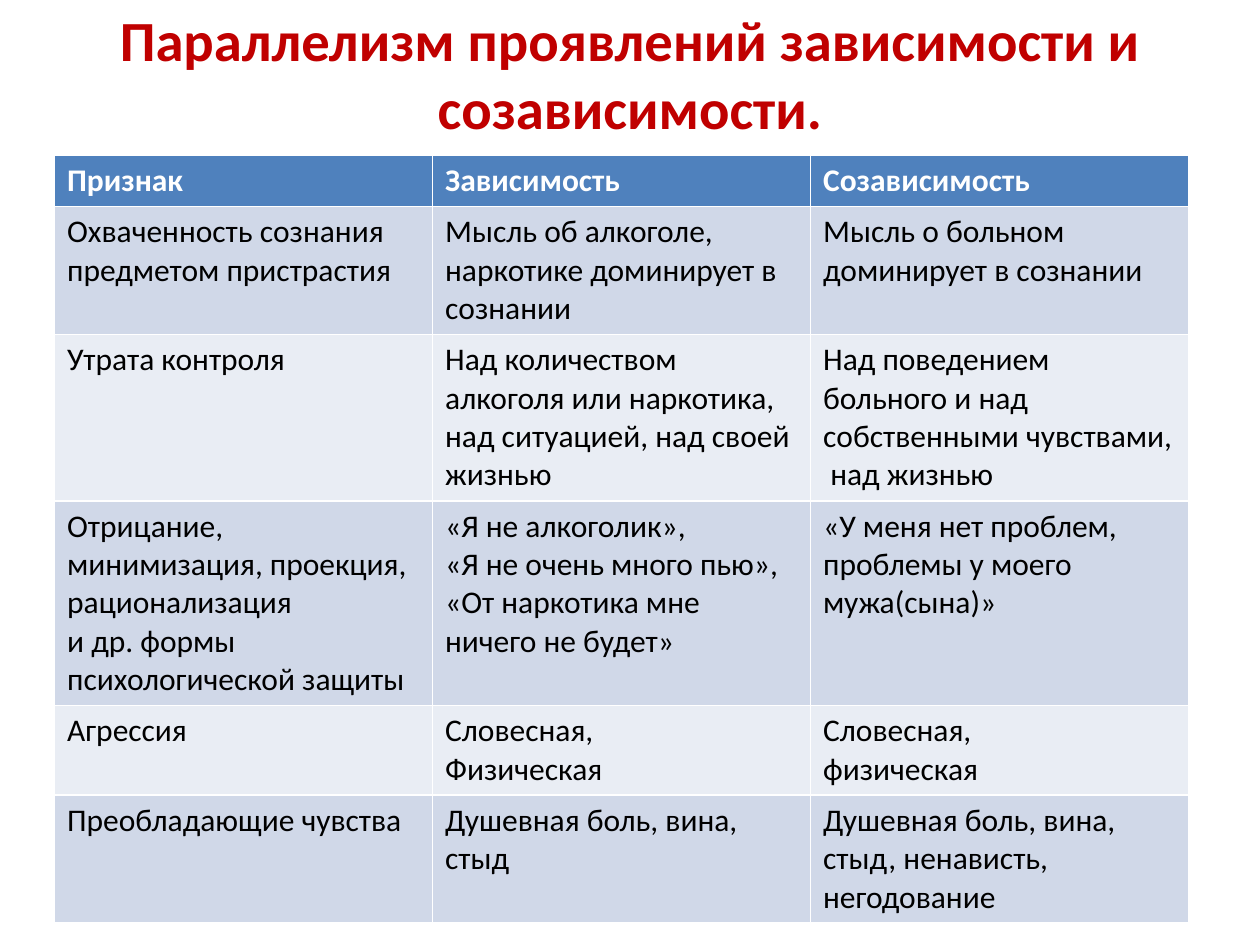
from pptx import Presentation
from pptx.dml.color import RGBColor
from pptx.enum.text import MSO_ANCHOR, MSO_AUTO_SIZE, PP_ALIGN
from pptx.util import Cm, Pt

MIDDLE = MSO_ANCHOR.MIDDLE
NO_AUTOFIT = MSO_AUTO_SIZE.NONE
CENTER = PP_ALIGN.CENTER

FONT = "Calibri"
COLORS = {
    "title": "C00000",
    "header": "4F81BD",
    "header_text": "FFFFFF",
    "odd_row": "D0D8E8",
    "even_row": "E9EDF4",
    "text": "000000",
}

ROWS = [
    ("Признак", "Зависимость", "Созависимость"),
    ("Охваченность сознания предметом пристрастия",
     "Мысль об алкоголе, наркотике доминирует в сознании",
     "Мысль о больном доминирует в сознании"),
    ("Утрата контроля",
     "Над количеством алкоголя или наркотика, над ситуацией, над своей жизнью",
     "Над поведением больного и над собственными чувствами,\n над жизнью"),
    ("Отрицание, минимизация, проекция, рационализация\n"
     "и др. формы психологической защиты",
     "«Я не алкоголик»,\n«Я не очень много пью», «От наркотика мне ничего не будет»",
     "«У меня нет проблем, проблемы у моего мужа(сына)»"),
    ("Агрессия", "Словесная,\nФизическая", "Словесная,\nфизическая"),
    ("Преобладающие чувства",
     "Душевная боль, вина, стыд",
     "Душевная боль, вина, стыд, ненависть, негодование"),
]
LINES_PER_ROW = [1, 3, 4, 5, 2, 3]
LINE_HEIGHT = 0.77
CELL_PADDING = 0.25


def style_text(text_frame, size, color, bold):
    for paragraph in text_frame.paragraphs:
        for run in paragraph.runs:
            run.font.name = FONT
            run.font.size = Pt(size)
            run.font.bold = bold
            run.font.color.rgb = RGBColor.from_string(COLORS[color])


prs = Presentation()
prs.slide_width, prs.slide_height = Cm(25.4), Cm(19.05)
slide = prs.slides.add_slide(prs.slide_layouts[5])

title = slide.shapes.title
title.left, title.top, title.width, title.height = Cm(1.27), Cm(0), Cm(22.86), Cm(2.92)
heading = title.text_frame
heading.text = "Параллелизм проявлений зависимости и созависимости."
heading.word_wrap = True
heading.auto_size = NO_AUTOFIT
heading.vertical_anchor = MIDDLE
heading.paragraphs[0].alignment = CENTER
style_text(heading, 32.4, "title", True)

row_heights = [Cm(lines * LINE_HEIGHT + CELL_PADDING) for lines in LINES_PER_ROW]
comparison = slide.shapes.add_table(
    len(ROWS), len(ROWS[0]), Cm(1.1), Cm(3.13), Cm(22.86), sum(row_heights)
).table

for r, (height, texts) in enumerate(zip(row_heights, ROWS)):
    comparison.rows[r].height = height
    is_header = r == 0
    fill = "header" if is_header else "odd_row" if r % 2 else "even_row"
    for c, text in enumerate(texts):
        cell = comparison.cell(r, c)
        cell.text_frame.text = text
        cell.fill.solid()
        cell.fill.fore_color.rgb = RGBColor.from_string(COLORS[fill])
        style_text(cell.text_frame, 18, "header_text" if is_header else "text", is_header)

prs.save("out.pptx")
